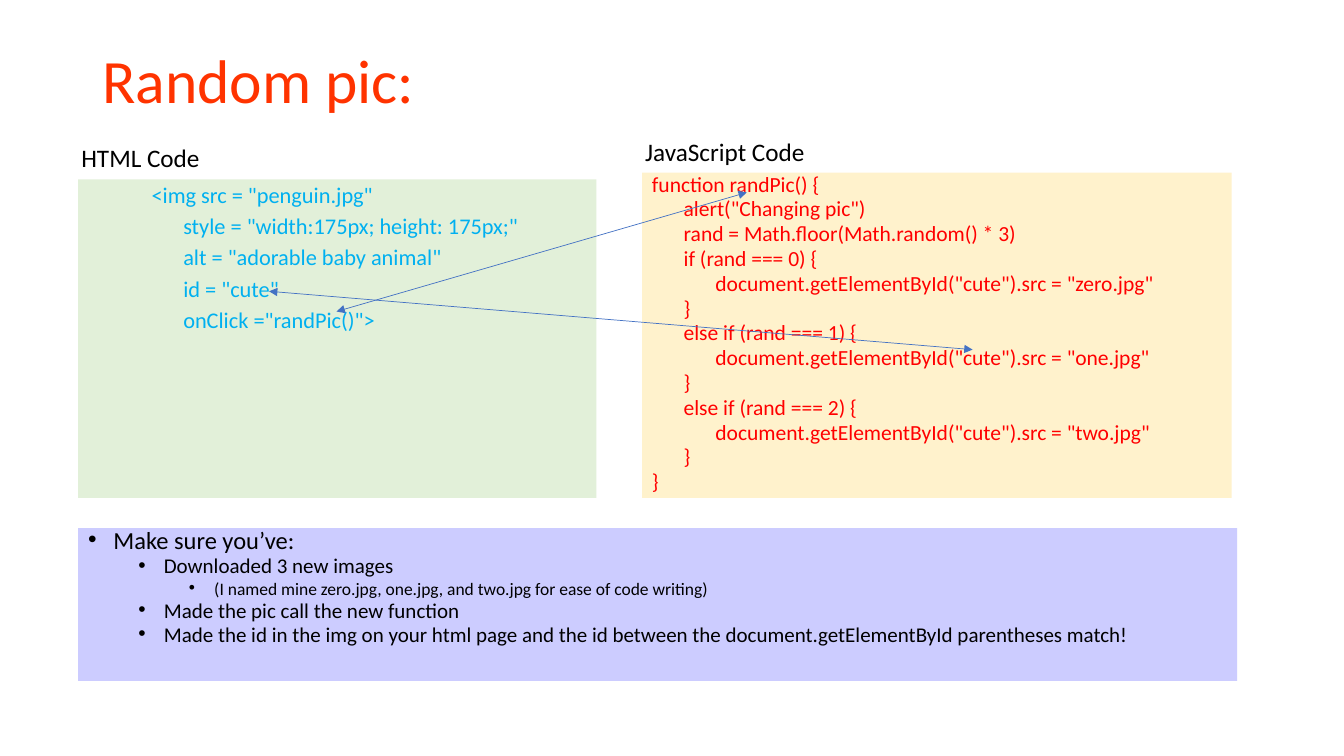
from dataclasses import dataclass

from lxml import etree
from pptx import Presentation
from pptx.dml.color import RGBColor
from pptx.enum.shapes import MSO_CONNECTOR, MSO_SHAPE
from pptx.enum.text import MSO_ANCHOR, PP_ALIGN
from pptx.oxml.ns import qn
from pptx.util import Cm, Pt

RECT = MSO_SHAPE.RECTANGLE
STRAIGHT = MSO_CONNECTOR.STRAIGHT
TOP, MIDDLE = MSO_ANCHOR.TOP, MSO_ANCHOR.MIDDLE
LEFT = PP_ALIGN.LEFT


@dataclass(frozen=True)
class Theme:
    font: str = "Calibri"
    title: str = "FF3300"
    ink: str = "000000"
    html: str = "00B0F0"
    html_fill: str = "E2F0D9"
    js: str = "FF0000"
    js_fill: str = "FFF2CC"
    checklist_fill: str = "CCCCFF"
    arrow: str = "4472C4"
    title_size: float = 44
    label_size: float = 18
    html_size: float = 16
    js_size: float = 15.4
    checklist_sizes: tuple = (17.5, 15, 12.5)


THEME = Theme()
CODE_INDENT = 0.8
BULLET_HANG = 0.64
BULLET_STEP = 1.27

HTML_LINES = [
    (2, '<img src = "penguin.jpg"'),
    (3, 'style = "width:175px; height: 175px;"'),
    (3, 'alt = "adorable baby animal"'),
    (3, 'id = "cute"'),
    (3, 'onClick ="randPic()">'),
]
JS_LINES = [
    (0, "function randPic() {"),
    (1, 'alert("Changing pic")'),
    (1, "rand = Math.floor(Math.random() * 3)"),
    (1, "if (rand === 0) {"),
    (2, 'document.getElementById("cute").src = "zero.jpg"'),
    (1, "}"),
    (1, "else if (rand === 1) {"),
    (2, 'document.getElementById("cute").src = "one.jpg"'),
    (1, "}"),
    (1, "else if (rand === 2) {"),
    (2, 'document.getElementById("cute").src = "two.jpg"'),
    (1, "}"),
    (0, "}"),
]
CHECKLIST = [
    (0, "Make sure you’ve:"),
    (1, "Downloaded 3 new images"),
    (2, "(I named mine zero.jpg, one.jpg, and two.jpg for ease of code writing)"),
    (1, "Made the pic call the new function"),
    (1, "Made the id in the img on your html page and the id between the "
        "document.getElementById parentheses match!"),
]


def apply(obj, values):
    for name, value in values.items():
        setattr(obj, name, value)


def write(p, text, size, color, spacing=1.0, before=0):
    apply(p, {"alignment": LEFT, "line_spacing": spacing, "space_before": Pt(before)})
    r = p.add_run()
    r.text = text
    apply(r.font, {"name": THEME.font, "size": Pt(size)})
    r.font.color.rgb = RGBColor.from_string(color)


def set_indent(p, margin, hang=0):
    pPr = p._p.get_or_add_pPr()
    pPr.set("marL", str(Cm(margin)))
    pPr.set("indent", str(-Cm(hang)))
    return pPr


def next_paragraph(tf, index):
    return tf.add_paragraph() if index else tf.paragraphs[0]


def add_text(slide, box, text, size, color, wrap, anchor, spacing):
    tf = slide.shapes.add_textbox(*map(Cm, box)).text_frame
    apply(tf, {"word_wrap": wrap, "vertical_anchor": anchor})
    write(tf.paragraphs[0], text, size, color, spacing)


def add_panel(slide, box, fill):
    sp = slide.shapes.add_shape(RECT, *map(Cm, box))
    sp.shadow.inherit = False
    sp.fill.solid()
    sp.fill.fore_color.rgb = RGBColor.from_string(fill)
    sp.line.fill.background()
    apply(sp.text_frame, {"word_wrap": True, "vertical_anchor": TOP})
    return sp.text_frame


def add_title(slide, box, text):
    add_text(slide, box, text, THEME.title_size, THEME.title, True, MIDDLE, 0.9)


def add_code(slide, box, label, label_width, lines, fill, color, size, spacing, before):
    left, top = box[:2]
    label_box = (left - 0.17, top - 1.05, label_width, 1.02)
    tf = add_panel(slide, box, fill)
    for i, (depth, text) in enumerate(lines):
        p = next_paragraph(tf, i)
        write(p, text, size, color, spacing, before)
        set_indent(p, depth * CODE_INDENT)
    add_text(slide, label_box, label, THEME.label_size, THEME.ink, False, TOP, 1.0)


def add_checklist(slide, box, items):
    tf = add_panel(slide, box, THEME.checklist_fill)
    for i, (level, text) in enumerate(items):
        p = next_paragraph(tf, i)
        p.level = level
        write(p, text, THEME.checklist_sizes[level], THEME.ink, 0.7, 4.4 if level else 10)
        pPr = set_indent(p, BULLET_HANG + level * BULLET_STEP, BULLET_HANG)
        etree.SubElement(pPr, qn("a:buFont")).set("typeface", "Arial")
        etree.SubElement(pPr, qn("a:buChar")).set("char", "•")


def add_arrow(slide, start, end):
    sp = slide.shapes.add_connector(STRAIGHT, *map(Cm, start + end))
    sp.line.color.rgb = RGBColor.from_string(THEME.arrow)
    sp.line.width = Pt(0.5)
    spPr = sp._element.spPr
    ln = spPr.find(qn("a:ln"))
    for tag in ("a:headEnd", "a:tailEnd"):
        etree.SubElement(ln, qn(tag)).set("type", "triangle")
    etree.SubElement(spPr, qn("a:effectLst"))


def main():
    prs = Presentation()
    apply(prs, {"slide_width": Cm(33.87), "slide_height": Cm(19.05)})
    slide = prs.slides.add_slide(prs.slide_layouts[6])
    add_title(slide, (2.33, 1.02, 29.21, 2.18), "Random pic:")
    add_checklist(slide, (1.97, 13.31, 29.21, 3.85), CHECKLIST)
    add_code(slide, (16.18, 4.35, 14.86, 8.2), "JavaScript Code", 4.57, JS_LINES,
             THEME.js_fill, THEME.js, THEME.js_size, 0.7, 4.8)
    add_code(slide, (1.97, 4.52, 13.06, 8.03), "HTML Code", 3.53, HTML_LINES,
             THEME.html_fill, THEME.html, THEME.html_size, 0.9, 5)
    add_arrow(slide, (8.48, 7.85), (18.82, 4.85))
    add_arrow(slide, (6.78, 7.34), (24.51, 8.81))
    prs.save("out.pptx")


if __name__ == "__main__":
    main()
